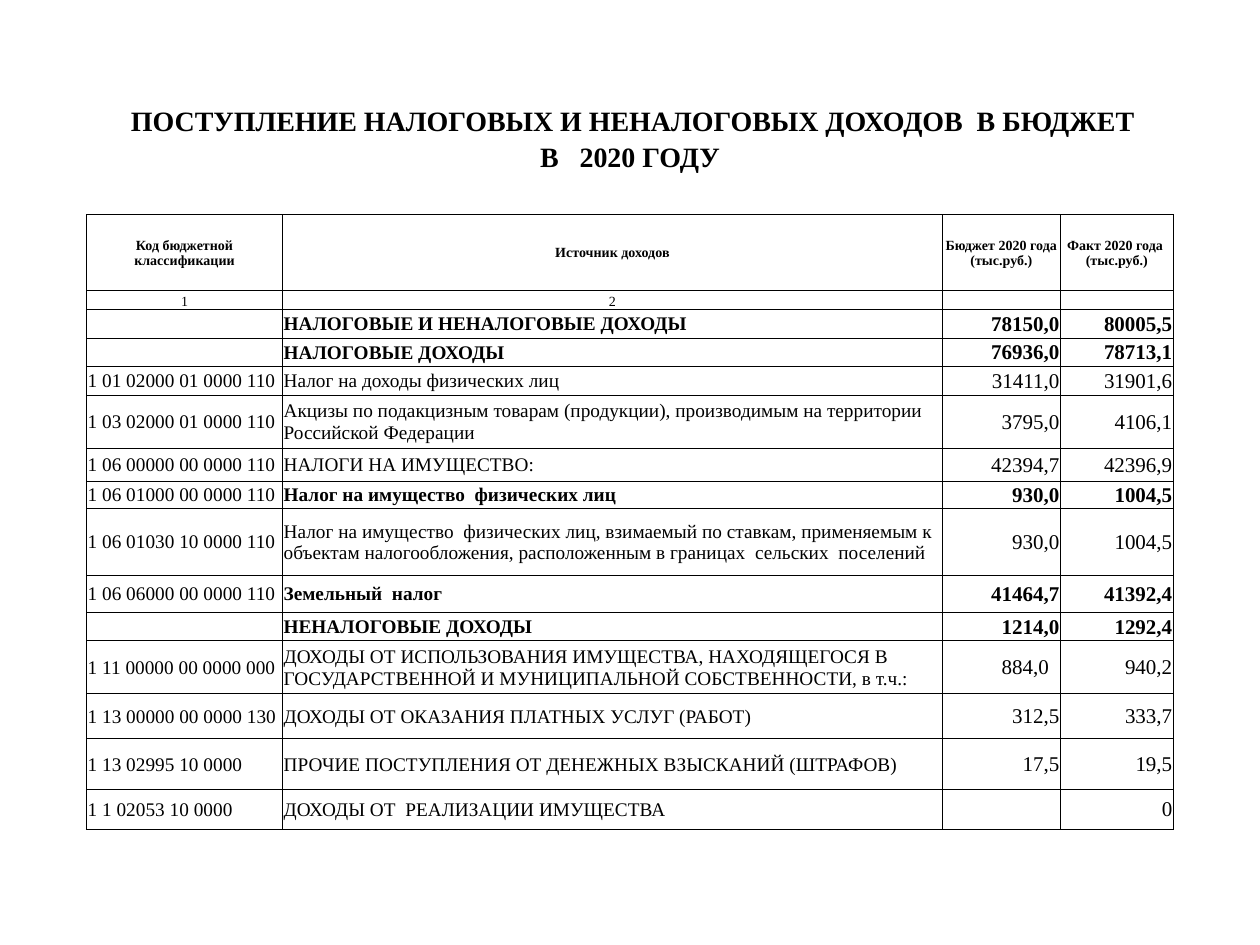
from copy import deepcopy

from lxml import etree
from pptx import Presentation
from pptx.dml.color import RGBColor
from pptx.enum.text import MSO_ANCHOR, MSO_AUTO_SIZE, PP_ALIGN
from pptx.oxml.ns import qn
from pptx.util import Pt

LEFT, CENTER, RIGHT = PP_ALIGN.LEFT, PP_ALIGN.CENTER, PP_ALIGN.RIGHT
MIDDLE, BOTTOM = MSO_ANCHOR.MIDDLE, MSO_ANCHOR.BOTTOM
NO_AUTOFIT = MSO_AUTO_SIZE.NONE
BLACK = RGBColor(0x00, 0x00, 0x00)
FONT = "Times New Roman"
TITLE_ONLY = 5

TITLE_LINES = ["ПОСТУПЛЕНИЕ НАЛОГОВЫХ И НЕНАЛОГОВЫХ ДОХОДОВ  В БЮДЖЕТ ", " В   2020 ГОДУ "]
COLUMN_WIDTHS = [112, 377, 67.5, 64.5]
HEADER_ROWS = [
    # height, bold, anchor, texts
    (43.5, True, MIDDLE, ["Код бюджетной классификации", "Источник доходов",
                          "Бюджет 2020 года (тыс.руб.)", "Факт 2020 года  (тыс.руб.)"]),
    (10.8, False, BOTTOM, ["1", "2", "", ""]),
]
INCOME_ROWS = [
    # height, bold, texts: code, source, budget, actual
    (16.5, True, ["", "НАЛОГОВЫЕ И НЕНАЛОГОВЫЕ ДОХОДЫ", "78150,0", "80005,5"]),
    (16, True, ["", "НАЛОГОВЫЕ ДОХОДЫ", "76936,0", "78713,1"]),
    (16.5, False, ["1 01 02000 01 0000 110", "Налог на доходы физических лиц",
                   "31411,0", "31901,6"]),
    (30.25, False, ["1 03 02000 01 0000 110",
                    "Акцизы по подакцизным товарам (продукции), производимым на "
                    "территории Российской Федерации", "3795,0", "4106,1"]),
    (19, False, ["1 06 00000 00 0000 110", "НАЛОГИ НА ИМУЩЕСТВО:", "42394,7", "42396,9"]),
    (15.5, True, ["1 06 01000 00 0000 110", "Налог на имущество  физических лиц",
                  "930,0", "1004,5"]),
    (38.25, False, ["1 06 01030 10 0000 110",
                    "Налог на имущество  физических лиц, взимаемый по ставкам, "
                    "применяемым к объектам налогообложения, расположенным в "
                    "границах  сельских  поселений", "930,0", "1004,5"]),
    (21, True, ["1 06 06000 00 0000 110", "Земельный  налог", "41464,7", "41392,4"]),
    (16.5, True, ["", "НЕНАЛОГОВЫЕ ДОХОДЫ", "1214,0", "1292,4"]),
    (30.25, False, ["1 11 00000 00 0000 000",
                    "ДОХОДЫ ОТ ИСПОЛЬЗОВАНИЯ ИМУЩЕСТВА, НАХОДЯЩЕГОСЯ В "
                    "ГОСУДАРСТВЕННОЙ И МУНИЦИПАЛЬНОЙ СОБСТВЕННОСТИ, в т.ч.:",
                    "884,0  ", "940,2"]),
    (25.75, False, ["1 13 00000 00 0000 130", "ДОХОДЫ ОТ ОКАЗАНИЯ ПЛАТНЫХ УСЛУГ (РАБОТ)",
                    "312,5", "333,7"]),
    (29, False, ["1 13 02995 10 0000", "ПРОЧИЕ ПОСТУПЛЕНИЯ ОТ ДЕНЕЖНЫХ ВЗЫСКАНИЙ (ШТРАФОВ)",
                 "17,5", "19,5"]),
    (22.5, False, ["1 1 02053 10 0000", "ДОХОДЫ ОТ  РЕАЛИЗАЦИИ ИМУЩЕСТВА", "", "0"]),
]


class BudgetSlide:
    """Holds the text and border style and the slide being built."""

    def __init__(self, slide):
        self.slide = slide
        self.border_width = Pt(0.5)

    def format_run(self, run, size, bold, name=FONT):
        run.font.name = name
        run.font.size = Pt(size)
        run.font.bold = bold
        run.font.color.rgb = BLACK

    def title(self, lines, left, top, width, height):
        shape = self.slide.shapes.title
        shape.left, shape.top, shape.width, shape.height = map(Pt, (left, top, width, height))
        frame = shape.text_frame
        frame.auto_size = NO_AUTOFIT
        frame.vertical_anchor = MIDDLE
        paragraph = frame.paragraphs[0]
        paragraph.alignment = CENTER
        paragraph.line_spacing = 0.9
        # A large leading space sets the height of the first line
        paragraph.text = " "
        self.format_run(paragraph.runs[0], 33, True, "Calibri")
        for index, line in enumerate(lines):
            if index:
                paragraph.add_line_break()
            run = paragraph.add_run()
            run.text = line
            self.format_run(run, 16, True)
        # Line breaks take the size of the text around them
        for line_break in paragraph._p.findall(qn("a:br")):
            line_break.append(deepcopy(run.font._element))

    def table(self, left, top, widths, heights):
        frame = self.slide.shapes.add_table(
            len(heights), len(widths), Pt(left), Pt(top), Pt(sum(widths)), Pt(sum(heights)))
        table = frame.table
        table.first_row = table.horz_banding = False
        for column, width in zip(table.columns, widths):
            column.width = Pt(width)
        for row, height in zip(table.rows, heights):
            row.height = Pt(height)
        return table

    def cell(self, cell, text, size, bold, alignment, anchor=MIDDLE):
        cell.margin_left = cell.margin_right = cell.margin_top = Pt(0.6)
        cell.margin_bottom = 0
        cell.vertical_anchor = anchor
        self.borders(cell)
        cell.fill.background()
        paragraph = cell.text_frame.paragraphs[0]
        paragraph.alignment = alignment
        if text:
            paragraph.text = text
            self.format_run(paragraph.runs[0], size, bold)
        else:
            # Empty cells need a small size so that the row keeps its height
            etree.SubElement(paragraph._p, qn("a:endParaRPr"), sz="800")

    def borders(self, cell):
        properties = cell._tc.get_or_add_tcPr()
        for side in ("a:lnL", "a:lnR", "a:lnT", "a:lnB"):
            line = etree.SubElement(properties, qn(side), w=str(self.border_width))
            fill = etree.SubElement(line, qn("a:solidFill"))
            etree.SubElement(fill, qn("a:srgbClr"), val=str(BLACK))


def main():
    presentation = Presentation()
    presentation.slide_width, presentation.slide_height = Pt(720), Pt(540)
    slide = presentation.slides.add_slide(presentation.slide_layouts[TITLE_ONLY])
    budget = BudgetSlide(slide)

    # Heading
    budget.title(TITLE_LINES, 49.5, 28.8, 621, 88)

    # Table grid
    heights = [row[0] for row in HEADER_ROWS + INCOME_ROWS]
    rows = list(budget.table(49.5, 122.5, COLUMN_WIDTHS, heights).rows)

    # Column headings and column numbers
    for row, (_, bold, anchor, texts) in zip(rows, HEADER_ROWS):
        for cell, text in zip(row.cells, texts):
            budget.cell(cell, text, 8, bold, CENTER, anchor)

    # Income lines: codes are never bold, amounts are larger and right-aligned
    for row, (_, bold, texts) in zip(rows[len(HEADER_ROWS):], INCOME_ROWS):
        for column, (cell, text) in enumerate(zip(row.cells, texts)):
            is_amount = column >= 2
            budget.cell(cell, text, 12 if is_amount else 11, bold and column > 0,
                        RIGHT if is_amount else LEFT)

    presentation.save("out.pptx")


if __name__ == "__main__":
    main()
